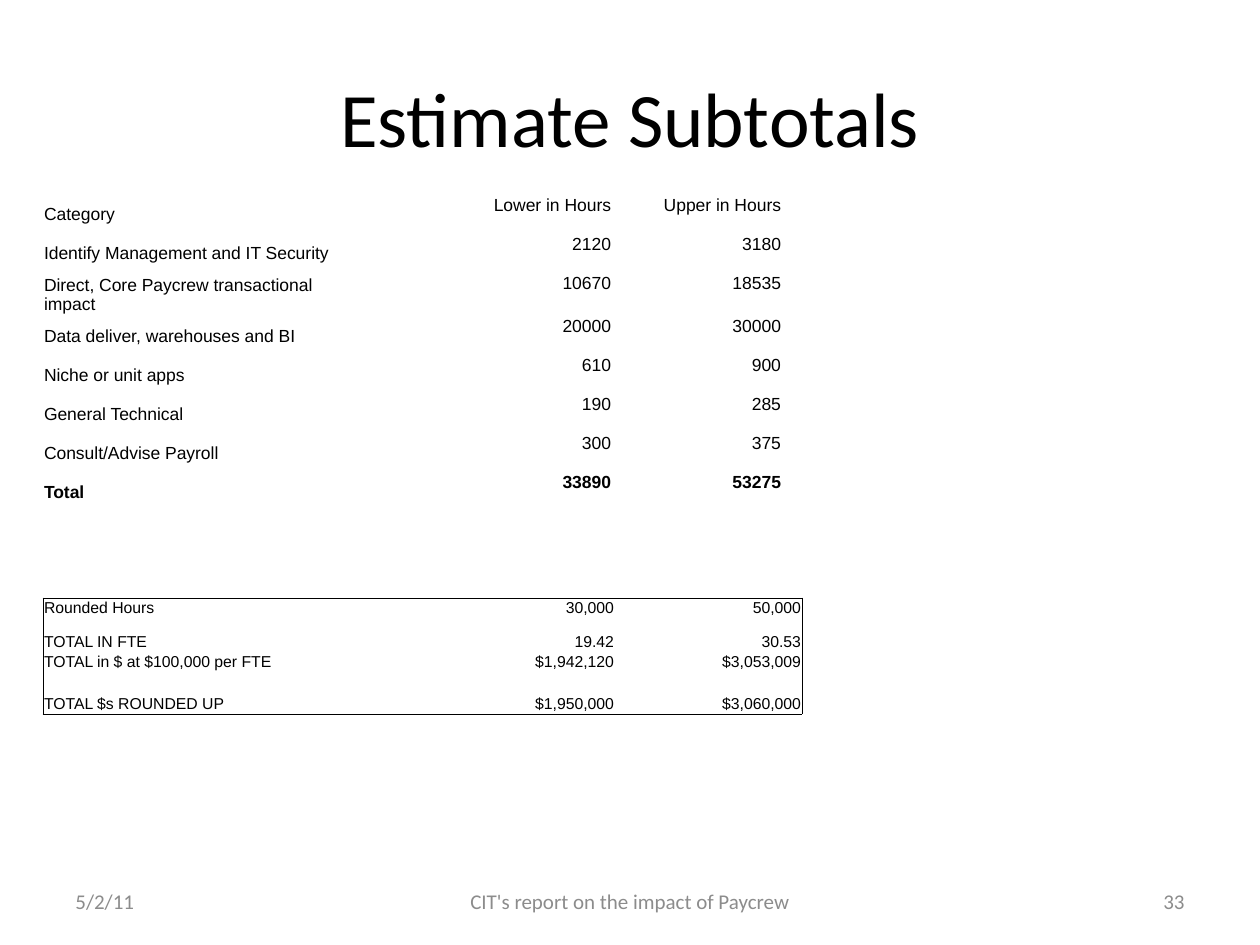
from lxml.etree import SubElement
from pptx import Presentation
from pptx.dml.color import RGBColor
from pptx.enum.text import MSO_ANCHOR, PP_ALIGN
from pptx.oxml.ns import qn
from pptx.util import Pt

PX = 914400 // 126
COLORS = {"ink": "000000", "footer": "8C8C8C", "paper": "FFFFFF"}
NO_STYLE = "{2D5ABB26-0587-4C30-8999-92F81FD0307C}"

HOURS = [
    ("Category", "Lower in Hours", "Upper in Hours"),
    ("Identify Management and IT Security", "2120", "3180"),
    ("Direct, Core Paycrew transactional impact", "10670", "18535"),
    ("Data deliver, warehouses and BI", "20000", "30000"),
    ("Niche or unit apps", "610", "900"),
    ("General Technical", "190", "285"),
    ("Consult/Advise Payroll", "300", "375"),
    ("Total", "33890", "53275"),
]
COSTS = [
    ("Rounded Hours", "30,000", "50,000"),
    ("TOTAL IN FTE", "19.42", "30.53"),
    ("TOTAL in $ at $100,000 per FTE", "$1,942,120", "$3,053,009"),
    ("TOTAL $s ROUNDED UP", "$1,950,000", "$3,060,000"),
]


def emu(*lengths):
    return [length * PX for length in lengths]


def color(name):
    return RGBColor.from_string(COLORS[name])


def add_run(paragraph, words, size, font, ink, align, bold=False):
    paragraph.alignment = align
    run = paragraph.add_run()
    run.text = words
    run.font.size = Pt(size)
    run.font.name = font
    run.font.bold = bold
    run.font.color.rgb = color(ink)


def add_label(slide, box, words, size, ink, align):
    frame = slide.shapes.add_textbox(*emu(*box)).text_frame
    frame.word_wrap = True
    frame.vertical_anchor = MSO_ANCHOR.MIDDLE
    add_run(frame.paragraphs[0], words, size, "Calibri", ink, align)


def add_footer(slide, box):
    left, top, width, height = box
    side, middle = 294, 400
    parts = [
        (0, side, "5/2/11", PP_ALIGN.LEFT),
        ((width - middle) // 2, middle, "CIT's report on the impact of Paycrew", PP_ALIGN.CENTER),
        (width - side, side, "33", PP_ALIGN.RIGHT),
    ]
    for offset, part_width, words, align in parts:
        add_label(slide, (left + offset, top, part_width, height), words, 12, "footer", align)


def add_grid(slide, left, top, widths, heights, rows, size):
    box = emu(left, top, sum(widths), sum(heights))
    grid = slide.shapes.add_table(len(rows), len(widths), *box).table
    grid.first_row = grid.horz_banding = False
    grid._tbl.tblPr.find(qn("a:tableStyleId")).text = NO_STYLE
    for column, width in zip(grid.columns, emu(*widths)):
        column.width = width
    for row, height in zip(grid.rows, emu(*heights)):
        row.height = height
    for r, row in enumerate(rows):
        for c, words in enumerate(row):
            cell = grid.cell(r, c)
            cell.margin_left = cell.margin_right = cell.margin_top = PX
            cell.margin_bottom = 0
            align = PP_ALIGN.RIGHT if c else PP_ALIGN.LEFT
            add_run(cell.text_frame.paragraphs[0], words, size, "Arial", "ink",
                    align, bold=row[0] == "Total")
    return grid


def add_hours(slide, left, top):
    grid = add_grid(slide, left, top, (320, 249, 170), [39] * len(HOURS), HOURS, 10)
    for r in range(len(HOURS)):
        grid.cell(r, 0).vertical_anchor = MSO_ANCHOR.MIDDLE
    for cell in grid.iter_cells():
        cell.fill.background()


def add_border(cell, side):
    line = SubElement(cell._tc.get_or_add_tcPr(), qn(f"a:ln{side}"), w=str(Pt(0.5)))
    SubElement(SubElement(line, qn("a:solidFill")), qn("a:srgbClr"), val=COLORS["ink"])


def add_costs(slide, left, top):
    grid = add_grid(slide, left, top, (387, 185, 187), (34, 20, 42, 20), COSTS, 9)
    last_row, last_column = len(grid.rows) - 1, len(grid.columns) - 1
    for r in range(last_row + 1):
        for c in range(last_column + 1):
            cell = grid.cell(r, c)
            edges = {"L": c == 0, "R": c == last_column, "T": r == 0, "B": r == last_row}
            for side, outer in edges.items():
                if outer:
                    add_border(cell, side)
            cell.fill.solid()
            cell.fill.fore_color.rgb = color("paper")


def main():
    deck = Presentation()
    deck.slide_width, deck.slide_height = emu(1260, 945)
    slide = deck.slides.add_slide(deck.slide_layouts[6])
    add_label(slide, (63, 38, 1134, 157), "Estimate Subtotals", 44, "ink", PP_ALIGN.CENTER)
    add_footer(slide, (63, 876, 1134, 50))
    add_hours(slide, 43, 195)
    add_costs(slide, 43, 598)
    deck.save("out.pptx")


if __name__ == "__main__":
    main()
